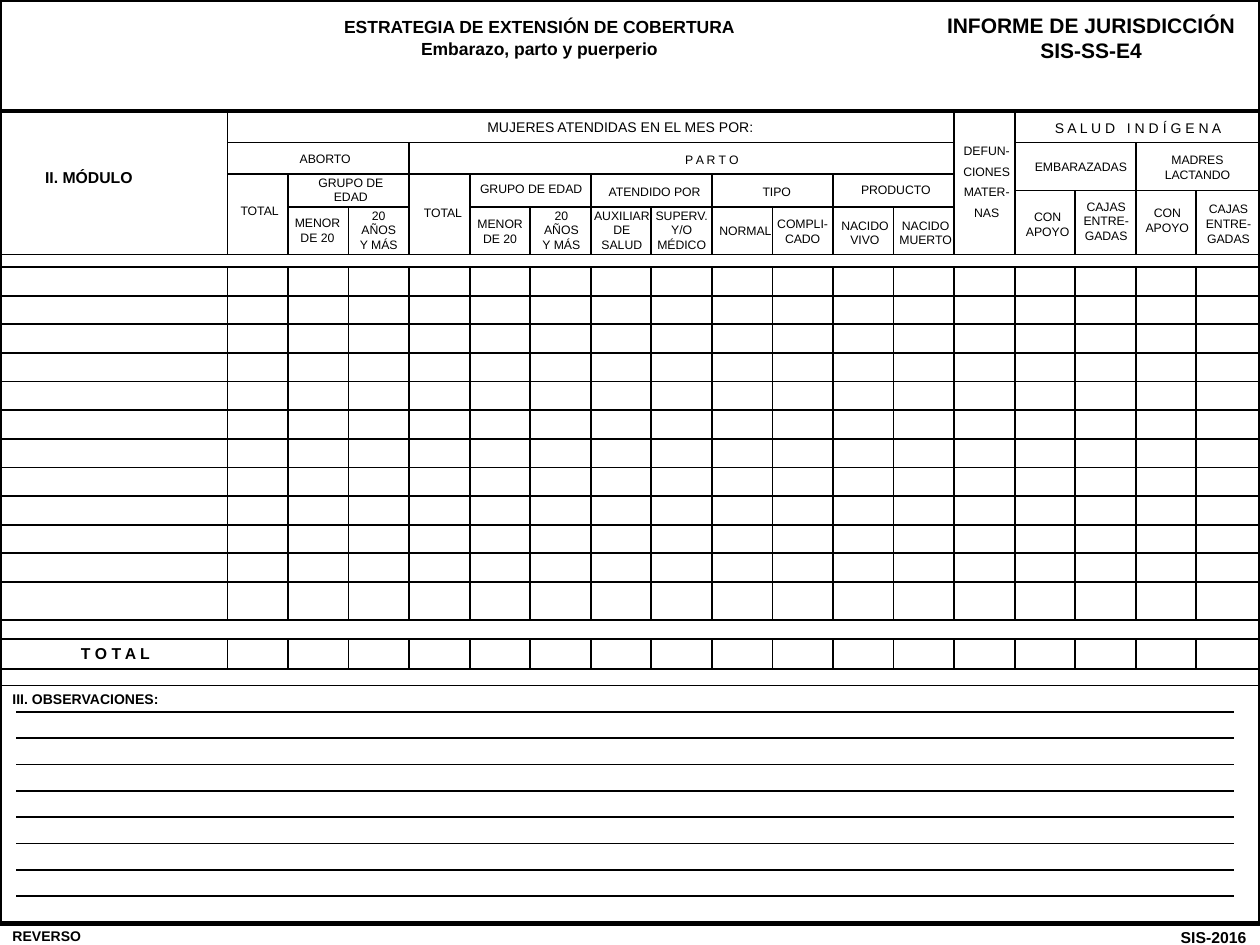
import pptx
import pptx.util
import pptx.dml.color
import pptx.enum.shapes
import pptx.enum.text
import pptx.oxml.ns
import lxml.etree

Pt = pptx.util.Pt
BLACK = pptx.dml.color.RGBColor(0, 0, 0)
ALIGN = pptx.enum.text.PP_ALIGN
LEFT, MID, RIGHT = ALIGN.LEFT, ALIGN.CENTER, ALIGN.RIGHT

FRAME = {
    "word_wrap": True,
    "auto_size": pptx.enum.text.MSO_AUTO_SIZE.NONE,
    "vertical_anchor": pptx.enum.text.MSO_ANCHOR.TOP,
    "margin_left": Pt(7.2), "margin_right": Pt(7.2),
    "margin_top": Pt(3.6), "margin_bottom": Pt(3.6),
}

# Column edges shared by the header, the grid and the total row
COLS = [130 + 34.6 * i for i in range(17)]
# Top of each column edge in the header
TOPS = [0, 36, 54.7, 18, 36, 54.7, 36, 54.7, 36, 54.7, 36, 54.7,
        0, 0, 45.4, 18, 45.4]
# Header rules: left, right, height
RULES = [(COLS[0], COLS[12], 18), (COLS[0], COLS[12], 36),
         (COLS[1], COLS[3], 54.7), (COLS[4], COLS[12], 54.7),
         (COLS[13], 720, 18), (COLS[13], 720, 45.4)]
# Header labels: text, left, top, width, lines
HEADS = [
    ("ABORTO", 146.9, 19.4, 77.8, 1),
    ("GRUPO DE EDAD", 169.2, 33.1, 62.6, 2),
    ("TOTAL", 128.2, 49, 40.3, 1),
    ("MENOR DE 20", 159.8, 56.2, 43.2, 2),
    ("20 AÑOS Y MÁS", 196.6, 51.8, 39.6, 3),
    ("TOTAL", 233.3, 50.4, 39.6, 1),
    ("P A R T O", 269.3, 20.2, 275, 1),
    ("GRUPO DE EDAD", 265.7, 36.7, 75.6, 1),
    ("ATENDIDO POR", 337.7, 38.2, 72.7, 1),
    ("TIPO", 411.1, 38.2, 65.5, 1),
    ("PRODUCTO", 483.1, 37.4, 57.6, 1),
    ("MENOR DE 20", 264.2, 56.9, 43.2, 2),
    ("20 AÑOS Y MÁS", 301.3, 51.8, 39, 3),
    ("AUXILIAR DE SALUD", 331.9, 51.8, 46.8, 3),
    ("SUPERV. Y/O MÉDICO", 366.5, 51.8, 46.1, 3),
    ("NORMAL", 402.5, 60.5, 46.8, 1),
    ("COMPLI-CADO", 432, 56.9, 53.3, 2),
    ("NACIDO VIVO", 473, 57.6, 42.5, 2),
    ("NACIDO MUERTO", 506.2, 57.6, 45.4, 2),
    ("EMBARAZADAS", 583.2, 23.8, 69, 1),
    ("MADRES LACTANDO", 656.6, 20.2, 55.4, 2),
    ("CON APOYO", 577.4, 52.6, 42.5, 2),
    ("CAJAS ENTRE-GADAS", 606.2, 46.8, 51.8, 3),
    ("CON APOYO", 645.8, 50.4, 42.5, 2),
    ("CAJAS ENTRE-GADAS", 676.1, 48.2, 51.8, 3),
]


def put(obj, vals):
    for key, val in vals.items():
        setattr(obj, key, val)


def fill(shape, lines, size, bold=False, align=MID, lead=1.0):
    frame = shape.text_frame
    put(frame, FRAME)
    for i, text in enumerate(lines):
        para = frame.paragraphs[0] if i == 0 else frame.add_paragraph()
        para.text = text
        put(para, {"alignment": align, "line_spacing": lead,
                   "space_before": Pt(0), "space_after": Pt(0)})
        put(para.font, {"name": "Arial", "size": Pt(size), "bold": bold})
        para.font.color.rgb = BLACK


def label(slide, box, text, size, **style):
    shape = slide.shapes.add_textbox(*map(Pt, box))
    fill(shape, text.split("\n"), size, **style)


def rule(slide, x1, y1, x2, y2, width=1):
    kind = pptx.enum.shapes.MSO_CONNECTOR.STRAIGHT
    line = slide.shapes.add_connector(kind, Pt(x1), Pt(y1), Pt(x2), Pt(y2))
    line.line.width = Pt(width)
    line.line.color.rgb = BLACK
    props = line._element.spPr
    lxml.etree.SubElement(props, pptx.oxml.ns.qn("a:effectLst"))


def border(slide, box):
    kind = pptx.enum.shapes.MSO_SHAPE.RECTANGLE
    shape = slide.shapes.add_shape(kind, *map(Pt, box))
    shape.shadow.inherit = False
    shape.fill.background()
    shape.line.width = Pt(2.5)
    shape.line.color.rgb = BLACK


def banner(slide, box):
    x, y, w, h = box
    title = slide.shapes.title
    put(title, {"left": Pt(x + 162), "top": Pt(y + 5.8),
                "width": Pt(292.3), "height": Pt(31)})
    fill(title, ["ESTRATEGIA DE EXTENSIÓN DE COBERTURA",
                 "Embarazo, parto y puerperio"], 10, bold=True)
    label(slide, (x + w - 187.2, y + 3.6, 181.4, 36),
          "INFORME DE JURISDICCIÓN\nSIS-SS-E4", 12, bold=True)
    rule(slide, x, y + h, x + w, y + h, 2)


def header(slide, box):
    x, y, w, h = box
    # Cell edges
    for col, top in zip(COLS, TOPS):
        rule(slide, x + col, y + top, x + col, y + h)
    for left, right, top in RULES:
        rule(slide, x + left, y + top, x + right, y + top)
    rule(slide, x, y + h, x + w, y + h)
    # Labels
    label(slide, (x + 2.9, y + 28.8, 95.8, 18), "II. MÓDULO", 9, bold=True)
    label(slide, (x + 133.2, y + 0.7, 442.8, 16.6),
          "MUJERES ATENDIDAS EN EL MES POR:", 8)
    label(slide, (x + 581, y + 1.4, 139, 16.6),
          "S A L U D   I N D Í G E N A", 8)
    label(slide, (x + 539.8, y + 11.6, 48, 54),
          "DEFUN-CIONES MATER-NAS", 7, lead=1.4)
    for text, left, top, wide, count in HEADS:
        label(slide, (x + left, y + top, wide, 8 * count + 7.8), text, 7)


def grid(slide, box, rows):
    x, y, w, h = box
    for top in rows + [h]:
        rule(slide, x, y + top, x + w, y + top)
    for col in COLS:
        rule(slide, x + col, y, x + col, y + h)


def total(slide, box):
    x, y, w, h = box
    grid(slide, box, [0])
    label(slide, (x + 5.8, y - 0.7, 120.2, 18), "T O T A L", 9, bold=True)


def notes(slide, box):
    x, y, w, h = box
    rule(slide, x, y, x + w, y)
    label(slide, (x, y - 0.7, 173.5, 16.6), "III. OBSERVACIONES:", 8,
          bold=True, align=LEFT)
    step = (h - 15.1) / 8
    for i in range(9):
        top = y + 15.1 + step * i
        rule(slide, x + 9.4, top, x + w - 15.1, top)


def footer(slide, box):
    x, y, w, h = box
    label(slide, (x, y, 63.4, h), "REVERSO", 8, bold=True, align=LEFT)
    label(slide, (x + w - 73.4, y, 72.7, h), "SIS-2016", 9,
          bold=True, align=RIGHT)


def main():
    deck = pptx.Presentation()
    put(deck, {"slide_width": Pt(720), "slide_height": Pt(540)})
    slide = deck.slides.add_slide(deck.slide_layouts[5])
    border(slide, (0, 0, 720, 527.8))
    banner(slide, (0, 0, 720, 63.4))
    header(slide, (0, 63.4, 720, 82))
    grid(slide, (0, 152.6, 720, 201.6), [16.36 * i for i in range(12)])
    total(slide, (0, 365, 720, 17.3))
    notes(slide, (0, 391.7, 720, 135.4))
    footer(slide, (0, 526.3, 720, 13.7))
    deck.save("out.pptx")


if __name__ == "__main__":
    main()
